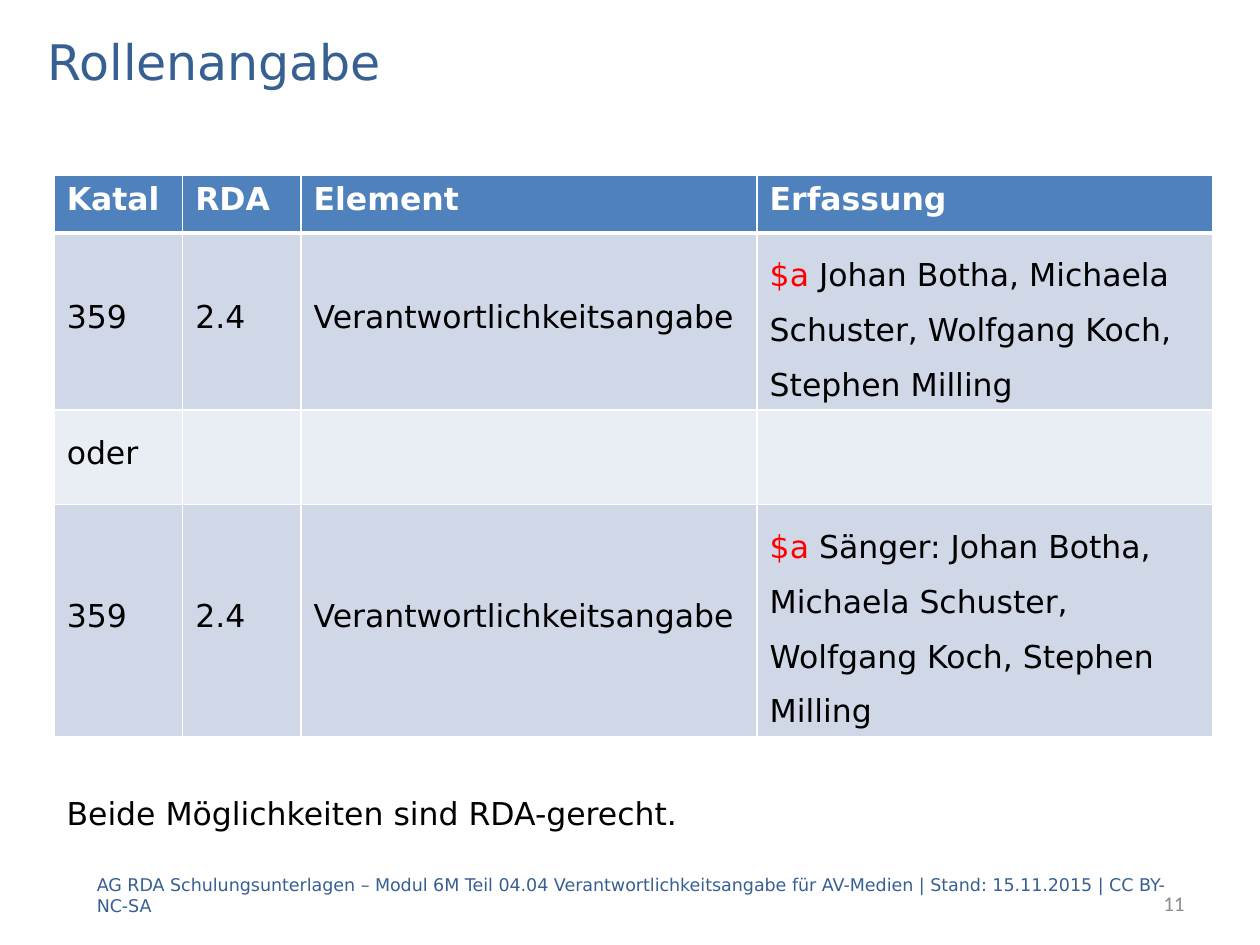
import pptx
import pptx.dml.color
import pptx.enum.text
import pptx.oxml
import pptx.oxml.ns
import pptx.util
from pptx.util import Inches

BLACK, WHITE, RED, NAVY, GREY = "000000", "FFFFFF", "FF0000", "376092", "8C8C8C"
HEADER_FILL, ROW_FILLS = "4F81BD", ("D0D8E8", "E9EDF4")
ALIGN = pptx.enum.text.PP_ALIGN
MIDDLE = pptx.enum.text.MSO_ANCHOR.MIDDLE


def color(value):
    return pptx.dml.color.RGBColor.from_string(value)


def write(paragraph, text, size=18, font="DejaVu Sans", ink=BLACK, bold=False,
          align=ALIGN.LEFT, spacing=None, gap=None):
    run = paragraph.add_run()
    run.text = text
    run.font.size = pptx.util.Pt(size)
    run.font.name = font
    run.font.bold = bold
    run.font.color.rgb = color(ink)
    paragraph.alignment = align
    if spacing is not None:
        paragraph.line_spacing = spacing
    if gap is not None:
        paragraph.space_before = paragraph.space_after = pptx.util.Pt(gap)


def add_borders(cell, bottom):
    properties = cell._tc.get_or_add_tcPr()
    for position, (side, width) in enumerate(
            (("lnL", 1), ("lnR", 1), ("lnT", 1), ("lnB", bottom))):
        properties.insert(position, pptx.oxml.parse_xml(
            f'<a:{side} {pptx.oxml.ns.nsdecls("a")} w="{pptx.util.Pt(width)}">'
            f'<a:solidFill><a:srgbClr val="{WHITE}"/></a:solidFill></a:{side}>'))


class SlideBuilder:
    def __init__(self, presentation):
        self.slide = presentation.slides.add_slide(presentation.slide_layouts[5])

    def title(self, text, left, top, width, height):
        heading = self.slide.shapes.title
        heading.left, heading.top = Inches(left), Inches(top)
        heading.width, heading.height = Inches(width), Inches(height)
        heading.text_frame.vertical_anchor = MIDDLE
        write(heading.text_frame.paragraphs[0], text, size=28, ink=NAVY)

    def text(self, text, left, top, width, height, **style):
        frame = self.slide.shapes.add_textbox(
            Inches(left), Inches(top), Inches(width), Inches(height)).text_frame
        frame.word_wrap = True
        frame.vertical_anchor = MIDDLE
        write(frame.paragraphs[0], text, **style)

    def table(self, headings, records, left, top, widths, heights):
        grid = self.slide.shapes.add_table(
            len(heights), len(widths), Inches(left), Inches(top),
            Inches(sum(widths)), Inches(sum(heights))).table
        for column, width in zip(grid.columns, widths):
            column.width = Inches(width)
        for row, height in zip(grid.rows, heights):
            row.height = Inches(height)
        for index, heading in enumerate(headings):
            cell = self.cell(grid, 0, index, HEADER_FILL, 3)
            write(cell.text_frame.paragraphs[0], heading, ink=WHITE, bold=True)
        for number, record in enumerate(records, 1):
            for index, entry in enumerate(record):
                cell = self.cell(grid, number, index, ROW_FILLS[(number - 1) % 2], 1)
                cell.vertical_anchor = MIDDLE
                paragraph = cell.text_frame.paragraphs[0]
                if index == len(record) - 1 and entry:
                    write(paragraph, "$a ", ink=RED)
                    write(paragraph, entry, spacing=1.5, gap=6)
                elif entry:
                    write(paragraph, entry, spacing=pptx.util.Pt(16), gap=6)

    def cell(self, grid, row, column, fill, bottom):
        cell = grid.cell(row, column)
        cell.fill.solid()
        cell.fill.fore_color.rgb = color(fill)
        add_borders(cell, bottom)
        return cell


def main():
    presentation = pptx.Presentation()
    presentation.slide_width, presentation.slide_height = Inches(10), Inches(7.5)
    builder = SlideBuilder(presentation)
    singers = "Johan Botha, Michaela Schuster, Wolfgang Koch, Stephen Milling"
    field = ("359", "2.4", "Verantwortlichkeitsangabe")

    builder.title("Rollenangabe", 0.28, 0.2, 9.45, 0.56)
    builder.table(
        ("Katal", "RDA", "Element", "Erfassung"),
        ((*field, singers), ("oder", "", "", ""), (*field, "Sänger: " + singers)),
        0.43, 1.39, (1.02, 0.94, 3.62, 3.62), (0.46, 1.4, 0.75, 1.84))
    builder.text("Beide Möglichkeiten sind RDA-gerecht.", 0.43, 6.17, 9.45, 0.56)
    builder.text(
        "AG RDA Schulungsunterlagen – Modul 6M Teil 04.04 Verantwortlichkeitsangabe "
        "für AV-Medien | Stand: 15.11.2015 | CC BY-NC-SA",
        0.67, 6.9, 8.74, 0.4, size=10, ink=NAVY)
    builder.text("11", 7.91, 6.97, 1.59, 0.4, size=12, font="Calibri", ink=GREY,
                 align=ALIGN.RIGHT)
    presentation.save("out.pptx")


if __name__ == "__main__":
    main()
